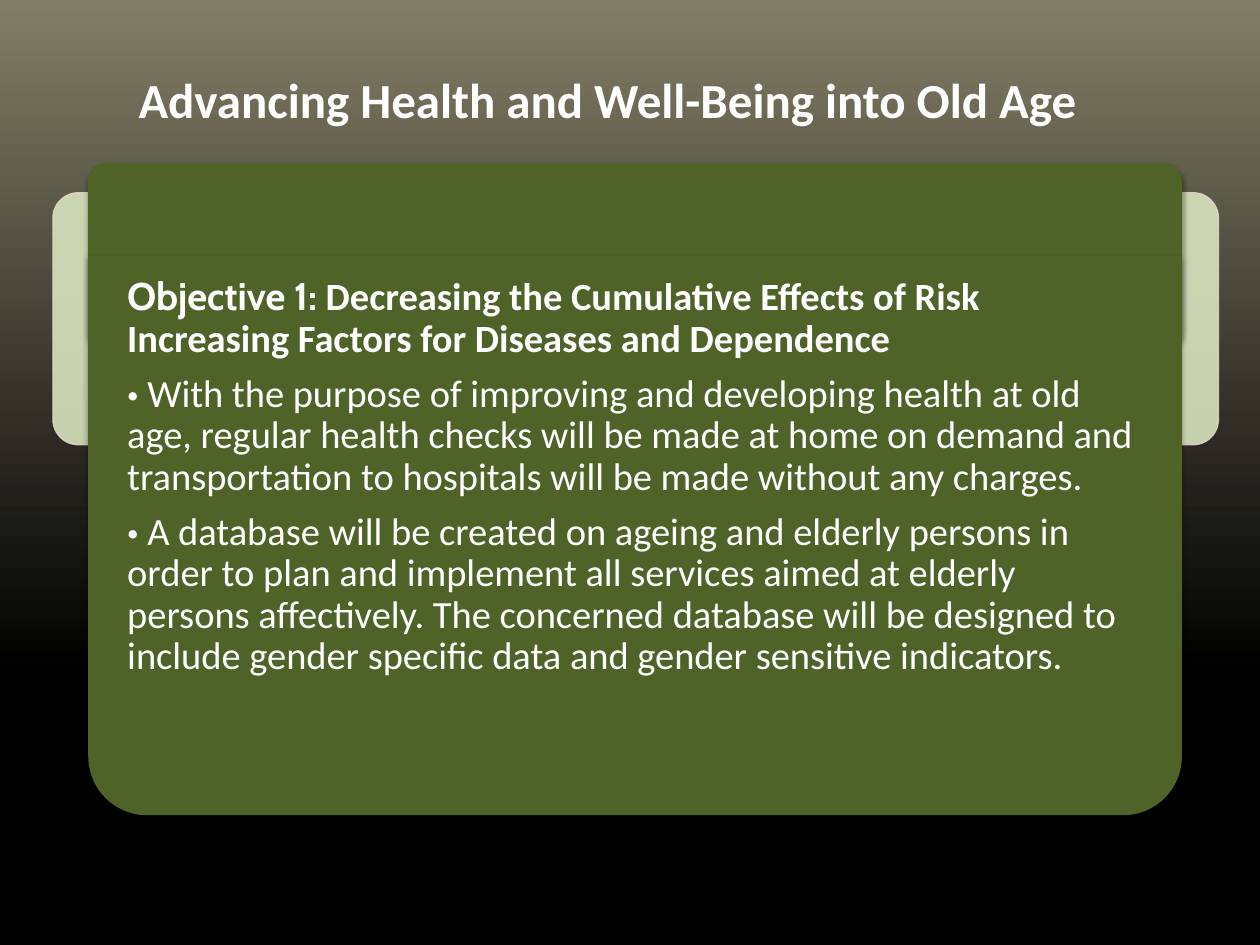
from lxml.etree import SubElement
from pptx import Presentation
from pptx.dml.color import RGBColor
from pptx.enum.shapes import MSO_SHAPE
from pptx.enum.text import MSO_ANCHOR, MSO_AUTO_SIZE, PP_ALIGN
from pptx.oxml.ns import qn
from pptx.util import Inches, Pt

COLORS = {
    "sky": "827E66",
    "ground": "000000",
    "band": "D7E4BD",
    "band_line": "E8D0D0",
    "card": "4F6228",
    "shadow": "000000",
    "text": "FFFFFF",
}
TITLE = "Advancing Health and Well-Being into Old Age"
BODY = [
    [("Objective 1: ", "Cabin", True),
     ("Decreasing the Cumulative Effects of Risk Increasing Factors for "
      "Diseases and Dependence", "Calibri", True)],
    [("• ", "Cabin", True),
     ("With the purpose of improving and developing health at old age, "
      "regular health checks will be made at home on demand and "
      "transportation to hospitals will be made without any charges.",
      "Calibri", False)],
    [("• ", "Cabin", True),
     ("A database will be created on ageing and elderly persons in order to "
      "plan and implement all services aimed at elderly persons affectively. "
      "The concerned database will be designed to include gender specific "
      "data and gender sensitive indicators.", "Calibri", False)],
]


def color(name):
    """Return the named palette colour."""
    return RGBColor.from_string(COLORS[name])


def set_alpha(properties, percent):
    """Make every solid colour inside an element partly transparent."""
    for element in properties.iter(qn("a:srgbClr")):
        SubElement(element, qn("a:alpha"), val=str(percent * 1000))


def add_shadow(shape):
    """Give a shape a soft shadow that falls straight down."""
    shape.shadow.inherit = False
    effects = shape._element.spPr.find(qn("a:effectLst"))
    outer = SubElement(effects, qn("a:outerShdw"), blurRad=str(Pt(3.1)),
                       dist=str(Pt(1.8)), dir="5400000", rotWithShape="0")
    SubElement(outer, qn("a:srgbClr"), val=COLORS["shadow"])
    set_alpha(effects, 35)


def add_panel(shapes, kind, box, fill, adjustments):
    """Add a flat filled panel without an outline."""
    shape = shapes.add_shape(kind, *map(Inches, box))
    for index, value in enumerate(adjustments):
        shape.adjustments[index] = value
    shape.shadow.inherit = False
    shape.fill.solid()
    shape.fill.fore_color.rgb = color(fill)
    shape.line.fill.background()
    return shape


def add_run(paragraph, text, font_name, size, bold):
    """Add one formatted run to a paragraph."""
    run = paragraph.add_run()
    run.text = text
    run.font.name = font_name
    run.font.size = Pt(size)
    run.font.bold = bold
    run.font.color.rgb = color("text")


def set_background(slide):
    """Fill the background with a gradient from top to bottom."""
    fill = slide.background.fill
    fill.gradient()
    fill.gradient_angle = 270
    stops = zip(fill.gradient_stops, (("sky", 0), ("ground", 0.71)))
    for stop, (name, position) in stops:
        stop.color.rgb = color(name)
        stop.position = position


def place_title(slide, box):
    """Place and format the title placeholder."""
    title = slide.shapes.title
    title.left, title.top, title.width, title.height = map(Inches, box)
    frame = title.text_frame
    frame.word_wrap = False
    frame.auto_size = MSO_AUTO_SIZE.SHAPE_TO_FIT_TEXT
    frame.vertical_anchor = MSO_ANCHOR.TOP
    paragraph = frame.paragraphs[0]
    paragraph.alignment = PP_ALIGN.LEFT
    add_run(paragraph, TITLE, "Calibri", 28, True)


def add_objective_card(slide, box):
    """Add the pale band, the green card and its text."""
    left, top, width, height = box
    shapes = slide.shapes.add_group_shape().shapes
    rounded = MSO_SHAPE.ROUNDED_RECTANGLE
    body_top = top + 0.74
    body_height = height - 0.74

    band = add_panel(shapes, rounded, (left - 0.28, top + 0.24, width + 0.57, 2),
                     "band", [0.1])
    band.line.color.rgb = color("band_line")
    band.line.width = Pt(0.75)
    set_alpha(band._element.spPr, 90)

    header = add_panel(shapes, rounded, (left, top, width, 1.47), "card", [0.1])
    body = add_panel(shapes, MSO_SHAPE.ROUND_2_SAME_RECTANGLE,
                     (left, body_top, width, body_height), "card", [0.105, 0])
    body.rotation = 180
    for shape in (header, body):
        add_shadow(shape)

    text_box = (left + 0.14, body_top, width - 0.28, body_height - 0.13)
    frame = shapes.add_textbox(*map(Inches, text_box)).text_frame
    frame.word_wrap = True
    frame.margin_left = frame.margin_right = Inches(0.17)
    frame.margin_top = frame.margin_bottom = Inches(0.17)
    for index, runs in enumerate(BODY):
        paragraph = frame.add_paragraph() if index else frame.paragraphs[0]
        paragraph.line_spacing = 0.9
        paragraph.space_after = Pt(7.7)
        for text, font_name, bold in runs:
            add_run(paragraph, text, font_name, 22, bold)


def main():
    """Build and save the slide."""
    presentation = Presentation()
    presentation.slide_width = Inches(10)
    presentation.slide_height = Inches(7.5)
    slide = presentation.slides.add_slide(presentation.slide_layouts[5])
    set_background(slide)
    place_title(slide, (1, 0.5, 7.73, 0.57))
    add_objective_card(slide, (0.7, 1.29, 8.68, 5.18))
    presentation.save("out.pptx")


if __name__ == "__main__":
    main()
